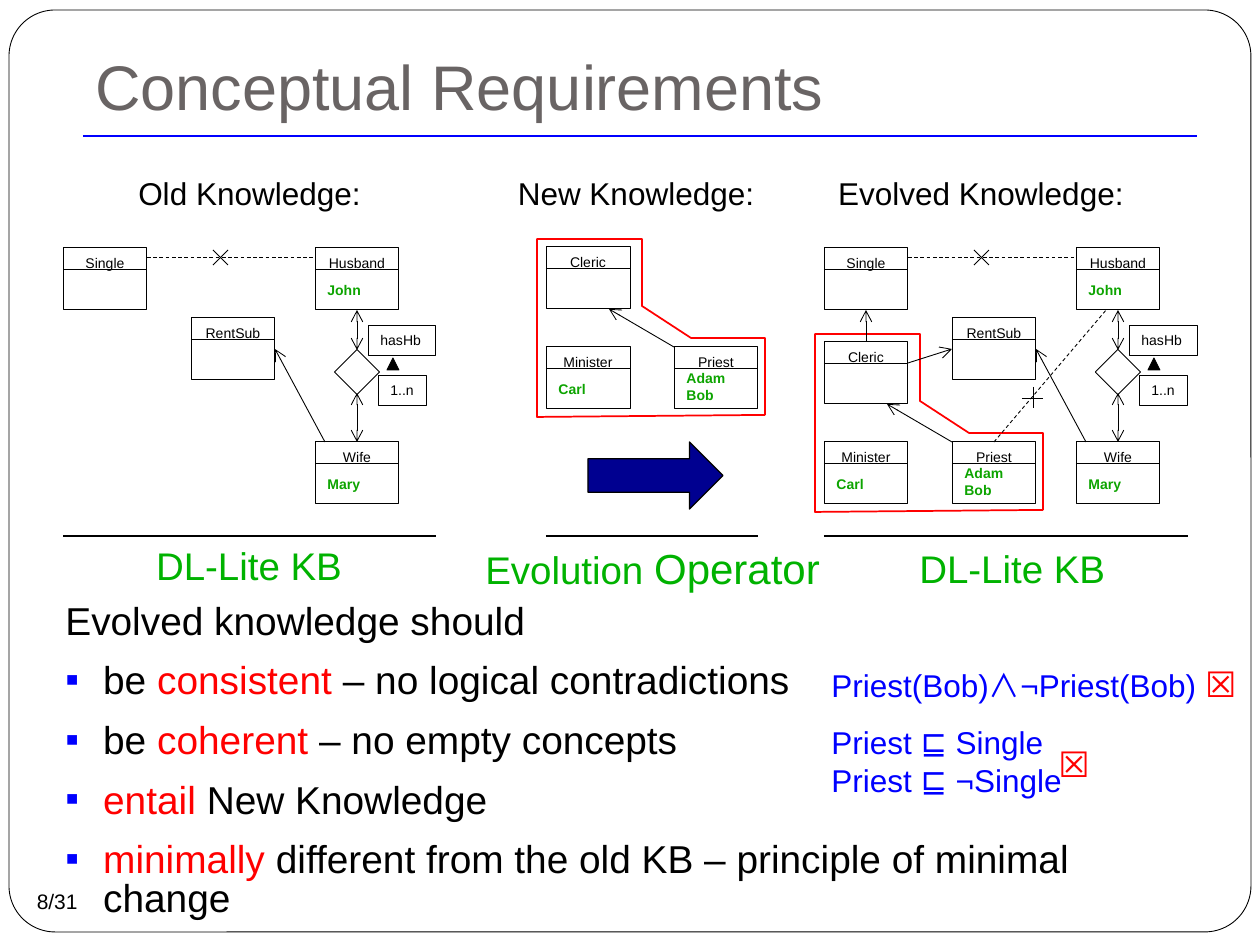
from lxml import etree
from pptx import Presentation, util as u
from pptx.dml.color import RGBColor
from pptx.enum import dml, shapes, text
from pptx.oxml.ns import qn

PX = u.Inches(1) / 126
BLACK, WHITE, BLUE, RED = "000000", "FFFFFF", "0000FF", "FF0000"
NAME_GREEN, LABEL_GREEN = "0DA400", "00B200"
rgb = RGBColor.from_string
ALIGN, ANCHOR, FIT = text.PP_ALIGN, text.MSO_ANCHOR, text.MSO_AUTO_SIZE
GROW = {"auto_size": FIT.SHAPE_TO_FIT_TEXT}
GROW_LINE = {**GROW, "word_wrap": False}

deck = Presentation()
deck.slide_width, deck.slide_height = u.Inches(10), u.Inches(7.5)
page = deck.slides.add_slide(deck.slide_layouts[6])


def draw(kind, place, paras=(), frame=None, fill=None, line=None, width=0.5):
    """Add a shape (a text box if kind is None); paras are (format, [(text, size, colour, font format)])."""
    place = [round(n * PX) for n in place]
    if kind is None:
        box = page.shapes.add_textbox(*place)
    else:
        box = page.shapes.add_shape(kind, *place)
        box.shadow.inherit = False
        if fill:
            box.fill.solid()
            box.fill.fore_color.rgb = rgb(fill)
        else:
            box.fill.background()
        box.line.color.rgb = rgb(line or BLACK)
        box.line.width = u.Pt(width)
    body = box.text_frame
    for key, value in {"word_wrap": True, "vertical_anchor": ANCHOR.TOP, **(frame or {})}.items():
        setattr(body, key, value)
    for i, (para_format, spans) in enumerate(paras):
        para = body.add_paragraph() if i else body.paragraphs[0]
        for key, value in {"alignment": ALIGN.LEFT, **para_format}.items():
            setattr(para, key, value)
        for words, size, colour, *font_format in spans:
            if words == "\n":
                para.add_line_break()
                continue
            span = para.add_run()
            span.text = words
            span.font.color.rgb = rgb(colour)
            for key, value in {"name": "Arial", "size": u.Pt(size), **dict(*font_format)}.items():
                setattr(span.font, key, value)
            etree.SubElement(span.font._element, qn("a:ea"), typeface=span.font.name)
    return box


def link(start, end, colour=BLACK, width=0.5, dash=False, arrows=(), begin=None, finish=None):
    """Add a straight line; begin and finish are (shape, side) joints, arrows are line ends."""
    line = page.shapes.add_connector(shapes.MSO_CONNECTOR.STRAIGHT, *[round(n * PX) for n in (*start, *end)])
    if begin:
        line.begin_connect(*begin)
    if finish:
        line.end_connect(*finish)
    line.line.color.rgb = rgb(colour)
    line.line.width = u.Pt(width)
    if dash:
        line.line.dash_style = dml.MSO_LINE.DASH
    outline = line.line._get_or_add_ln()
    for side in arrows:
        etree.SubElement(outline, qn("a:" + side), type="arrow")
    etree.SubElement(line._element.spPr, qn("a:effectLst"))


KIND = shapes.MSO_SHAPE
TAIL, BOTH = ["tailEnd"], ["headEnd", "tailEnd"]

# Page frame and title
border = draw(KIND.ROUNDED_RECTANGLE, (9, 10, 1242, 922), fill=WHITE)
border.adjustments[0] = 0.05
link((83, 136), (1197, 136), BLUE, 1)
draw(None, (83, 38, 1114, 98), [({}, [("Conceptual Requirements", 36, "696464")])],
     {"vertical_anchor": ANCHOR.BOTTOM, "margin_bottom": u.Inches(0.1)})

# Class boxes: the family model stands twice, the clergy model twice
OLD_X, NEW_X, EVOLVED_X = 63, 546, 824
NEW_Y, EVOLVED_Y = 247, 342
BOX_W, BOX_H, COLUMN = 84, 62, 128
family = [("Single", 0, 248, ""), ("Husband", 252, 248, "John"),
          ("RentSub", COLUMN, 318, ""), ("Wife", 252, 442, "Mary")]
clergy = [("Cleric", 0, 0, ""), ("Minister", 0, 100, "Carl"), ("Priest", COLUMN, 100, "Adam Bob")]
classes = {}
for left, top, model in [(OLD_X, 0, family), (NEW_X, NEW_Y, clergy),
                         (EVOLVED_X, 0, family), (EVOLVED_X, EVOLVED_Y, clergy)]:
    for name, dx, dy, members in model:
        x, y = left + dx, top + dy
        gap = u.Pt(0 if name == "Priest" else 6)
        paras = [({"alignment": ALIGN.CENTER, "space_after": gap}, [(name, 8, BLACK)])]
        if members:
            paras.append(({}, [(members, 8, NAME_GREEN, {"bold": True})]))
        classes[left, name] = draw(KIND.RECTANGLE, (x, y, BOX_W, BOX_H), paras, fill=WHITE)
        link((x, y + 21), (x + BOX_W, y + 21))

# Family relations
for x in (OLD_X, EVOLVED_X):
    husband, wife, rent_sub = (classes[x, name] for name in ("Husband", "Wife", "RentSub"))
    link((x + BOX_W, 257), (x + 252, 257), dash=True)
    link((x + 150, 265), (x + 165, 250))
    link((x + 165, 265), (x + 150, 250))
    link((x + 262, 442), (x + 212, 349), arrows=TAIL, finish=(rent_sub, 3))
    draw(KIND.RECTANGLE, (x + 278, 356, 32, 32)).rotation = 315
    link((x + 294, 350), (x + 294, 310), arrows=BOTH, finish=(husband, 2))
    link((x + 294, 393), (x + 294, 442), arrows=BOTH, finish=(wife, 0))
    draw(KIND.ISOSCELES_TRIANGLE, (x + 324, 358, 12, 12), fill=BLACK)
    for words, dx, y, width in [("hasHb", 305, 325, 68), ("1..n", 315, 375, 49)]:
        draw(KIND.RECTANGLE, (x + dx, y, width, 30), [({}, [(words, 8, BLACK)])], GROW_LINE)

# Clergy relations, with a red outline round the new knowledge
outline_points = [(-9, -8), (96, -8), (96, 59), (145, 91), (219, 91), (219, 168), (-9, 170)]
for x, y in [(NEW_X, NEW_Y), (EVOLVED_X, EVOLVED_Y)]:
    link((x + COLUMN, y + 100), (x + 63, y + 62), arrows=TAIL)
    first, *rest = [(x + dx, y + dy) for dx, dy in outline_points]
    pen = page.shapes.build_freeform(*first, scale=PX)
    pen.add_line_segments(rest, close=True)
    outline = pen.convert_to_shape()
    outline.shadow.inherit = False
    outline.fill.background()
    outline.line.color.rgb = rgb(RED)
    outline.line.width = u.Pt(1)

# Relations between the two models
single, cleric, priest, rent_sub = (
    classes[EVOLVED_X, name] for name in ("Single", "Cleric", "Priest", "RentSub"))
link((866, 342), (866, 310), arrows=TAIL, begin=(cleric, 0), finish=(single, 2))
link((908, 363), (952, 349), arrows=TAIL, finish=(rent_sub, 1))
link((994, 442), (1107, 309), dash=True, begin=(priest, 0))
link((1033, 387), (1033, 408))
link((1022, 398), (1043, 398))

# Headings above, rules and labels below
centre = {"alignment": ALIGN.CENTER}
for words, x, width, frame in [("Old Knowledge:", 63, 373, GROW), ("New Knowledge:", 504, 264, GROW_LINE),
                               ("Evolved Knowledge:", 824, 314, GROW_LINE)]:
    draw(None, (x, 168, width, 50), [(centre, [(words, 18, BLACK)])], frame)
for x, end in [(63, 436), (546, 758), (824, 1188)]:
    link((x, 536), (end, 536), width=1)
kb_label = ("DL-Lite KB", 22, LABEL_GREEN)
draw(None, (63, 536, 372, 59), [(centre, [kb_label])], GROW)
draw(None, (473, 536, 366, 63),
     [({}, [("Evolution ", 22, LABEL_GREEN), ("Operator", 24, LABEL_GREEN)])], GROW_LINE)
draw(None, (907, 539, 213, 59), [({}, [kb_label])], GROW_LINE)
draw(KIND.RIGHT_ARROW, (588, 442, 135, 67), fill="000090", width=0.75)

# Requirements list
requirements = [
    [("Evolved knowledge should", BLACK)],
    [("be ", BLACK), ("consistent ", RED), ("– no logical contradictions", BLACK)],
    [("be ", BLACK), ("coherent ", RED), ("– no empty concepts", BLACK)],
    [("entail ", RED), ("New Knowledge", BLACK)],
    [("minimally ", RED), ("different from the old KB – principle of minimal change", BLACK)],
]
spacing = {"line_spacing": 0.83, "space_after": u.Pt(12)}
listing = draw(None, (53, 598, 1164, 304),
               [({**spacing, "space_before": u.Pt(0 if i else 3)},
                 [(words, 22.2, colour) for words, colour in spans])
                for i, spans in enumerate(requirements)])
for i, para in enumerate(listing.text_frame.paragraphs):
    props = para._p.get_or_add_pPr()
    props.set("marL", str(u.Inches(0.3)))
    props.set("indent", str(-u.Inches(0.3)))
    if i:
        etree.SubElement(etree.SubElement(props, qn("a:buClr")), qn("a:srgbClr"), val=BLUE)
        etree.SubElement(props, qn("a:buFont"), typeface="Arial")
        etree.SubElement(props, qn("a:buChar"), char="▪")

# Counterexamples
cross = ("☒", 20, RED)
draw(None, (819, 656, 441, 55),
     [({}, [("Priest(Bob)", 18, BLUE), ("∧", 18, BLUE, {"name": "Noto Sans CJK JP"}),
            ("¬Priest(Bob) ", 18, BLUE), cross])], GROW)
draw(None, (819, 717, 289, 89),
     [({}, [("Priest ⊑ Single", 18, BLUE), ("\n", 18, BLUE), ("Priest ⊑ ¬Single", 18, BLUE)])], GROW)
draw(None, (1046, 736, 64, 55), [({}, [cross])], GROW)

# Page number
draw(None, (6, 882, 84, 38), [({"alignment": ALIGN.RIGHT}, [("8/31", 12, BLACK)])], GROW)

deck.save("out.pptx")
